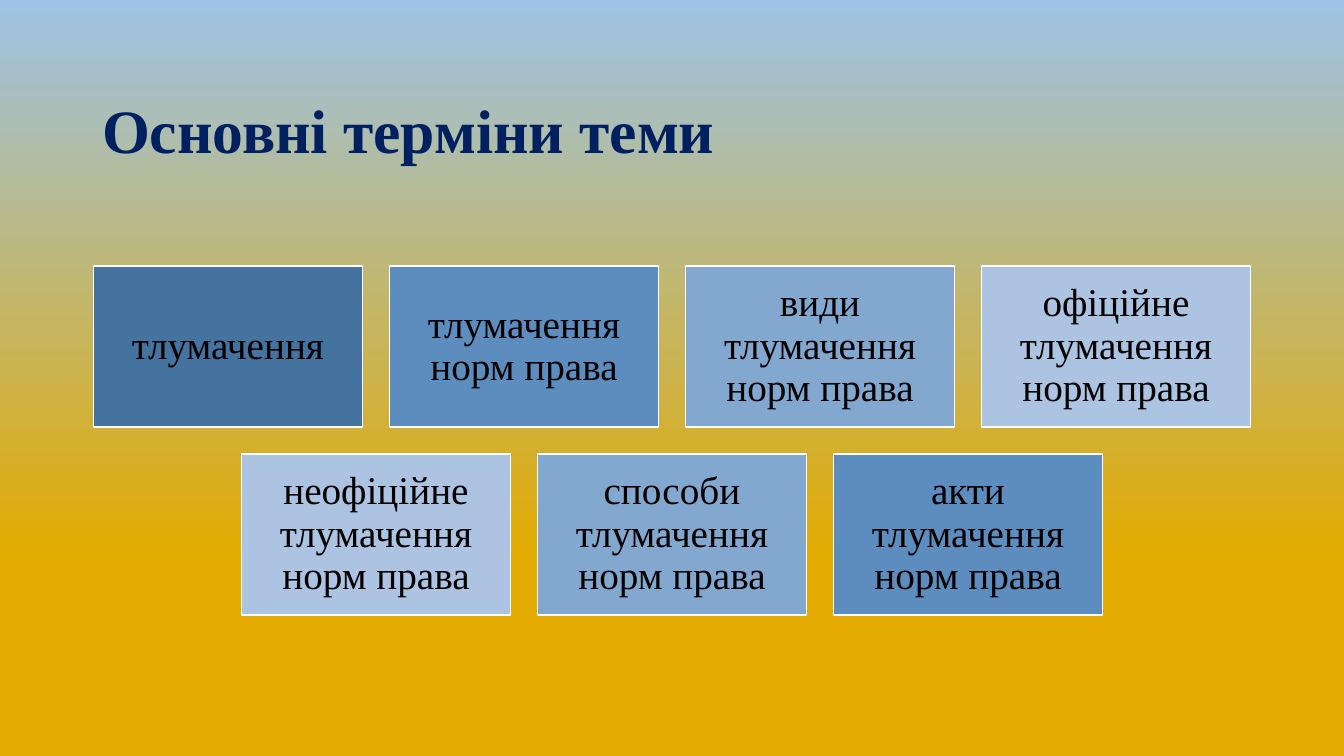
from dataclasses import dataclass

from pptx import Presentation
from pptx.dml.color import RGBColor
from pptx.enum.shapes import MSO_SHAPE
from pptx.enum.text import MSO_ANCHOR, PP_ALIGN
from pptx.util import Emu, Pt

# Content: rows of (term, shade)
TITLE = "Основні терміни теми"
TERM_ROWS = [
    [
        ("тлумачення", "deep"),
        ("тлумачення норм права", "strong"),
        ("види тлумачення норм права", "medium"),
        ("офіційне тлумачення норм права", "pale"),
    ],
    [
        ("неофіційне тлумачення норм права", "pale"),
        ("способи тлумачення норм права", "medium"),
        ("акти тлумачення норм права", "strong"),
    ],
]


@dataclass(frozen=True)
class Theme:
    font: str = "Times New Roman"
    title_size: int = 44
    term_size: int = 28
    title: str = "002060"
    text: str = "000000"
    outline: str = "FFFFFF"
    deep: str = "43739E"
    strong: str = "5D8DBE"
    medium: str = "83A8D0"
    pale: str = "ACC4E2"
    gold: str = "E3AB00"
    sky: str = "9DC3E6"


THEME = Theme()

# Layout in px
SLIDE_WIDTH, SLIDE_HEIGHT = 1344, 756
TITLE_AREA = (92, 61, 1159, 146)
BOX_WIDTH, BOX_HEIGHT, GAP = 269, 161, 27
ROWS_TOP, INSET = 266, 12


def px(length):
    return Emu(round(length * 914400 / 100.8))


def color(name):
    return RGBColor.from_string(getattr(THEME, name))


def apply(target, values):
    for name, value in values.items():
        setattr(target, name, value)


def write(frame, text, size, color_name, align, bold):
    apply(frame, {"word_wrap": True, "vertical_anchor": MSO_ANCHOR.MIDDLE})
    para = frame.paragraphs[0]
    apply(para, {"alignment": align, "line_spacing": 0.9})
    span = para.add_run()
    span.text = text
    apply(span.font, {"name": THEME.font, "size": Pt(size), "bold": bold})
    span.font.color.rgb = color(color_name)


def paint_background(page):
    fill = page.background.fill
    fill.gradient()
    fill.gradient_angle = 90
    for stop, (position, name) in zip(fill.gradient_stops, [(0.26, "gold"), (1, "sky")]):
        stop.position = position
        stop.color.rgb = color(name)


def add_title(page):
    title = page.shapes.title
    apply(title, dict(zip(("left", "top", "width", "height"), map(px, TITLE_AREA))))
    write(title.text_frame, TITLE, THEME.title_size, "title", PP_ALIGN.LEFT, True)


def add_term(page, left, top, term, shade):
    box = page.shapes.add_shape(
        MSO_SHAPE.RECTANGLE, px(left), px(top), px(BOX_WIDTH), px(BOX_HEIGHT)
    )
    box.shadow.inherit = False
    box.fill.solid()
    box.fill.fore_color.rgb = color(shade)
    box.line.color.rgb = color("outline")
    box.line.width = Pt(1)
    sides = ("left", "top", "right", "bottom")
    apply(box.text_frame, {f"margin_{side}": px(INSET) for side in sides})
    write(box.text_frame, term, THEME.term_size, "text", PP_ALIGN.CENTER, False)


def main():
    deck = Presentation()
    apply(deck, {"slide_width": px(SLIDE_WIDTH), "slide_height": px(SLIDE_HEIGHT)})
    page = deck.slides.add_slide(deck.slide_layouts.get_by_name("Title Only"))
    paint_background(page)
    add_title(page)

    # Each row is centred on the slide
    for row, terms in enumerate(TERM_ROWS):
        row_width = len(terms) * (BOX_WIDTH + GAP) - GAP
        row_left = (SLIDE_WIDTH - row_width) / 2
        top = ROWS_TOP + row * (BOX_HEIGHT + GAP)
        for column, (term, shade) in enumerate(terms):
            add_term(page, row_left + column * (BOX_WIDTH + GAP), top, term, shade)

    deck.save("out.pptx")


if __name__ == "__main__":
    main()
